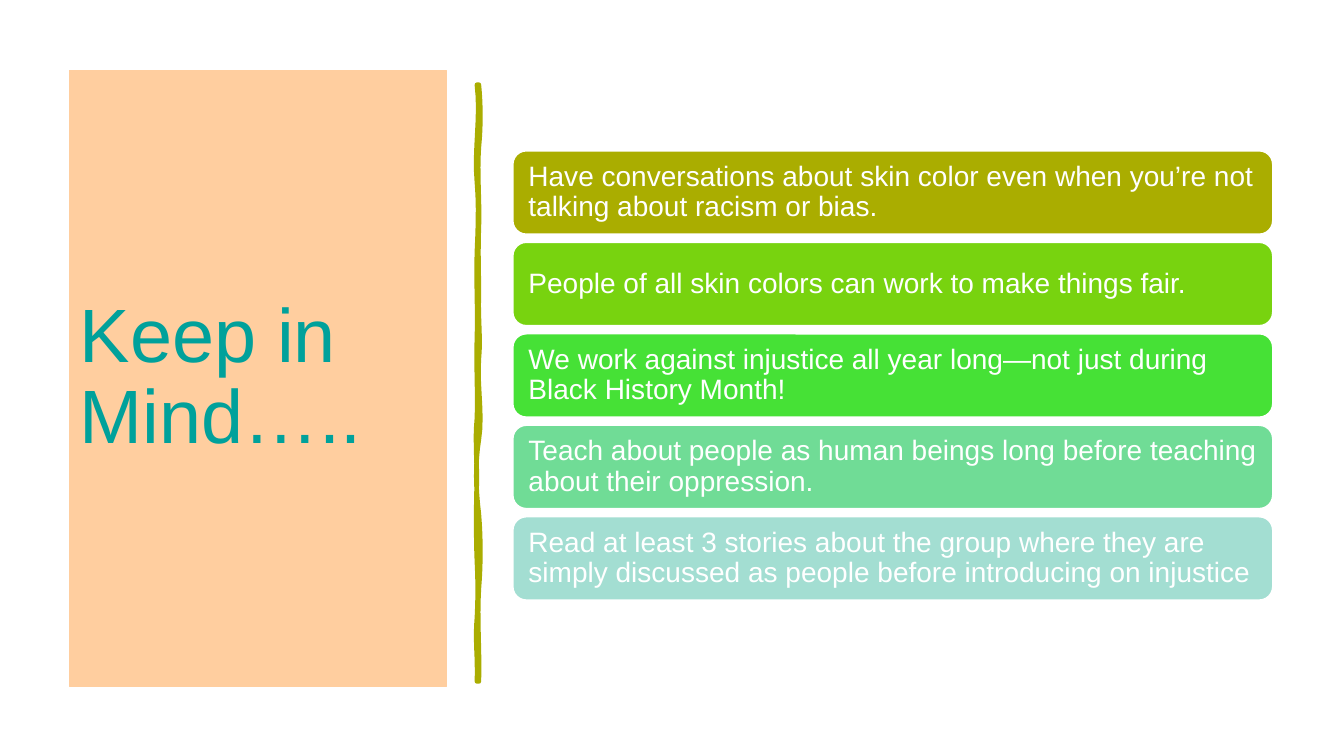
from pptx import Presentation
from pptx.dml.color import RGBColor
from pptx.enum.shapes import MSO_SHAPE
from pptx.enum.text import MSO_ANCHOR, MSO_AUTO_SIZE, PP_ALIGN
from pptx.util import Inches, Pt

ROUND = MSO_SHAPE.ROUNDED_RECTANGLE
MIDDLE = MSO_ANCHOR.MIDDLE
LEFT = PP_ALIGN.LEFT
NO_FIT = MSO_AUTO_SIZE.NONE

PEACH = RGBColor(0xFF, 0xCE, 0x9F)
TEAL = RGBColor(0x00, 0xA1, 0x9B)
OLIVE = RGBColor(0xAA, 0xAD, 0x00)
WHITE = RGBColor(0xFF, 0xFF, 0xFF)

# Card text and fill
CARDS = [
    ("Have conversations about skin color even when you’re not talking "
     "about racism or bias.", OLIVE),
    ("People of all skin colors can work to make things fair.",
     RGBColor(0x78, 0xD3, 0x0F)),
    ("We work against injustice all year long—not just during "
     "Black History Month!", RGBColor(0x46, 0xE1, 0x36)),
    ("Teach about people as human beings long before teaching "
     "about their oppression.", RGBColor(0x70, 0xDC, 0x96)),
    ("Read at least 3 stories about the group where they are simply "
     "discussed as people before introducing on injustice",
     RGBColor(0xA3, 0xDE, 0xD2)),
]
FIRST_TOP, LAST_TOP = 1.49, 5.12

# Each side of the brush stroke: x, start y, then (bend, bend, end y)
STROKE_TOP, STROKE_END = 0.84, 6.76
RIGHT_SIDE = (4.75, STROKE_TOP, [
    (4.77, 4.77, 1.46), (4.73, 4.76, 2.26), (4.74, 4.75, 2.94),
    (4.74, 4.77, 3.56), (4.73, 4.79, 4.36), (4.71, 4.72, 5.1),
    (4.77, 4.77, 5.84), (4.73, 4.76, STROKE_END)])
LEFT_SIDE = (4.73, STROKE_END, [
    (4.74, 4.71, 6.13), (4.74, 4.74, 5.57), (4.72, 4.72, 4.77),
    (4.73, 4.71, 4.15), (4.74, 4.72, 3.35), (4.74, 4.72, 2.5),
    (4.74, 4.75, 1.81), (4.7, 4.77, STROKE_TOP)])
STEPS = 8


def paint(shape, fill, line, width):
    shape.fill.solid()
    shape.fill.fore_color.rgb = fill
    shape.line.color.rgb = line
    shape.line.width = Pt(width)


def write(shape, text, size, color, inset=0.1, pad=0.05):
    frame = shape.text_frame
    frame.text = text
    frame.word_wrap = True
    frame.auto_size = NO_FIT
    frame.vertical_anchor = MIDDLE
    frame.margin_left = frame.margin_right = Inches(inset)
    frame.margin_top = frame.margin_bottom = Inches(pad)
    para = frame.paragraphs[0]
    para.alignment = LEFT
    para.line_spacing = 0.9
    para.font.name = "Arial"
    para.font.size = Pt(size)
    para.font.color.rgb = color


def add_title(slide, text):
    title = slide.shapes.title
    title.left, title.top = Inches(0.69), Inches(0.7)
    title.width, title.height = Inches(3.74), Inches(6.11)
    paint(title, PEACH, PEACH, 1)
    write(title, text, 54, TEAL)


def trace(x, start, bends):
    """Points along one side, as cubic curves that return to x."""
    points = [(Inches(x), Inches(start))]
    for one, two, end in bends:
        for step in range(1, STEPS + 1):
            t = step / STEPS
            u = 1 - t
            across = x * (u**3 + t**3) + 3 * u * t * (one * u + two * t)
            points.append((Inches(across), Inches(start + (end - start) * t)))
        start = end
    return points


def add_stroke(slide):
    points = trace(*RIGHT_SIDE) + trace(*LEFT_SIDE)
    pen = slide.shapes.build_freeform(*points[0])
    pen.add_line_segments(points[1:], close=True)
    stroke = pen.convert_to_shape()
    stroke.shadow.inherit = False
    paint(stroke, OLIVE, OLIVE, 3.25)


def add_card(slide, top, text, fill):
    card = slide.shapes.add_shape(
        ROUND, Inches(5.08), Inches(top), Inches(7.55), Inches(0.84))
    card.shadow.inherit = False
    paint(card, fill, WHITE, 2)
    write(card, text, 20, WHITE, inset=0.12, pad=0.12)


def main():
    deck = Presentation()
    deck.slide_width, deck.slide_height = Inches(13.33), Inches(7.5)
    slide = deck.slides.add_slide(deck.slide_layouts[5])

    # Title panel and divider
    add_title(slide, "Keep in Mind…..")
    add_stroke(slide)

    # Stack of cards
    pitch = (LAST_TOP - FIRST_TOP) / (len(CARDS) - 1)
    for row, (text, fill) in enumerate(CARDS):
        add_card(slide, FIRST_TOP + row * pitch, text, fill)

    deck.save("out.pptx")


if __name__ == "__main__":
    main()
